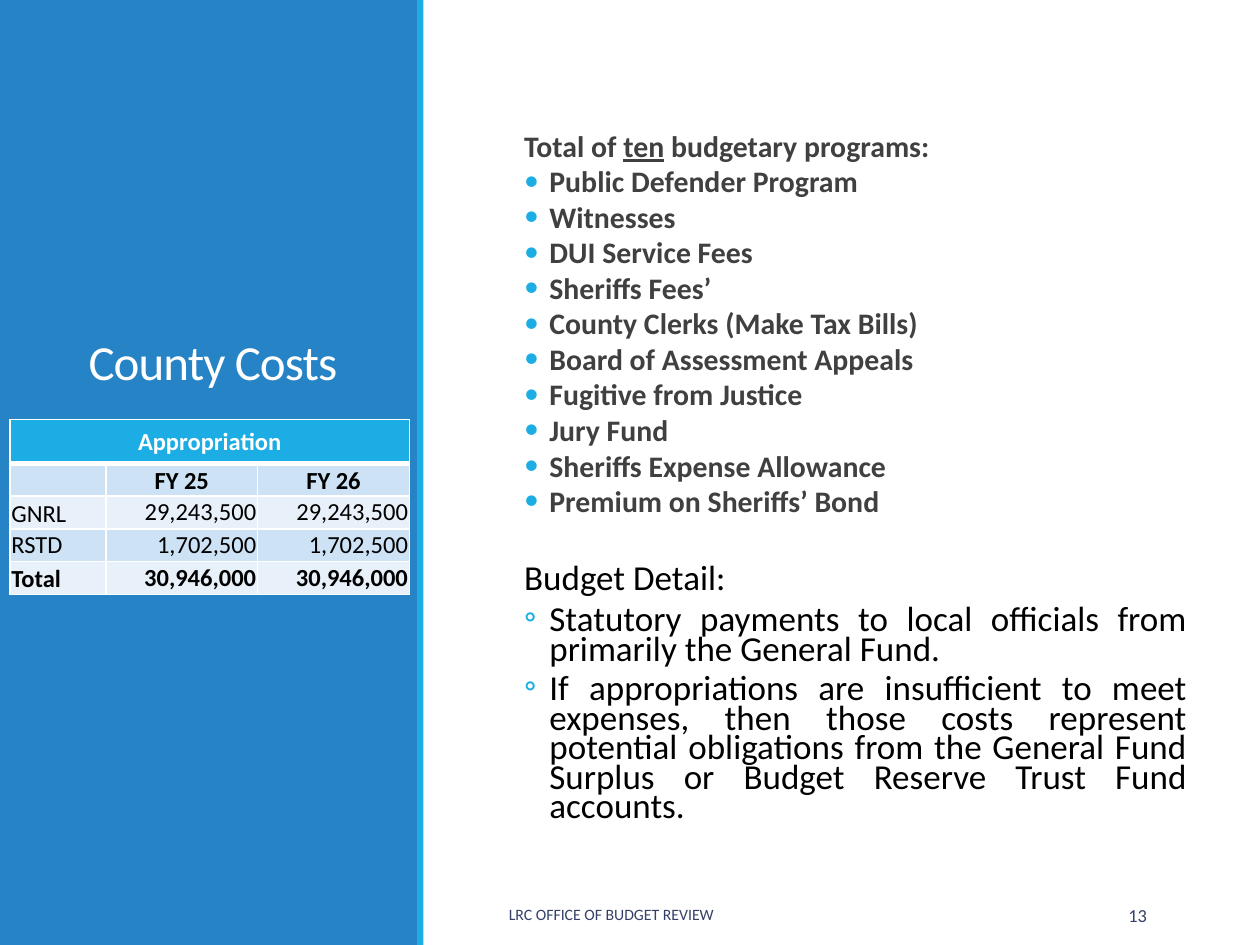
from lxml.etree import SubElement
from pptx import Presentation
from pptx.dml.color import RGBColor
from pptx.enum.shapes import MSO_SHAPE
from pptx.enum.text import MSO_ANCHOR, MSO_AUTO_SIZE, PP_ALIGN
from pptx.oxml import parse_xml
from pptx.oxml.ns import nsdecls, qn
from pptx.util import Inches, Pt

WIDE, HIGH = 10, 7.5
HUES = {"panel": "2683C6", "edge": "1CADE4", "white": "FFFFFF", "black": "000000",
        "grey": "404040", "foot": "344068", "band": "CDE3F5", "pale": "E8F1FA"}
FACE = "Calibri"
ITEMS = ["Public Defender Program", "Witnesses", "DUI Service Fees", "Sheriffs Fees’",
         "County Clerks (Make Tax Bills)", "Board of Assessment Appeals",
         "Fugitive from Justice", "Jury Fund", "Sheriffs Expense Allowance",
         "Premium on Sheriffs’ Bond"]
NOTES = ["Statutory payments to local officials from primarily the General Fund.",
         "If appropriations are insufficient to meet expenses, then those costs represent "
         "potential obligations from the General Fund Surplus or Budget Reserve Trust Fund "
         "accounts."]
ROWS = [["Appropriation", "", ""], ["", "FY 25", "FY 26"],
        ["GNRL", "29,243,500", "29,243,500"], ["RSTD", "1,702,500", "1,702,500"],
        ["Total", "30,946,000", "30,946,000"]]


def tint(name):
    """Return the named colour."""
    return RGBColor.from_string(HUES[name])


def place(shape, box):
    """Move a shape to a box in inches."""
    shape.left, shape.top, shape.width, shape.height = map(Inches, box)


def style(para, size, hue, bold=False):
    """Format every run of a paragraph."""
    for run in para.runs:
        font = run.font
        font.name, font.size, font.bold = FACE, Pt(size), bold
        font.color.rgb = tint(hue)


def add_panel(slide, box):
    """Draw the side panel and its edge behind all else."""
    left, top, width, height = box
    edge = 0.05
    parts = [("panel", left, width - edge), ("edge", left + width - edge, edge)]
    for spot, (hue, start, span) in enumerate(parts):
        shape = slide.shapes.add_shape(
            MSO_SHAPE.RECTANGLE, *map(Inches, (start, top, span, height)))
        shape.shadow.inherit = False
        shape.fill.solid()
        shape.fill.fore_color.rgb = tint(hue)
        shape.line.fill.background()
        slide.shapes.element.insert(2 + spot, shape.element)


def add_title(slide, box):
    """Fill the title placeholder."""
    title = slide.shapes.title
    place(title, box)
    frame = title.text_frame
    frame.text = "County Costs"
    frame.auto_size = MSO_AUTO_SIZE.NONE
    frame.vertical_anchor = MSO_ANCHOR.BOTTOM
    para = frame.paragraphs[0]
    para.alignment, para.line_spacing = PP_ALIGN.CENTER, 0.85
    style(para, 28, "white")
    para.runs[0].font._element.set("spc", "-50")


def add_line(frame, text, size, hue, bold, mark=None, space=0.7, gap=2):
    """Append one body paragraph, with a bullet if a mark is given."""
    para = frame.paragraphs[0]
    if para.runs:
        para = frame.add_paragraph()
    para.text = text
    props = para._p.get_or_add_pPr()
    props.set("marL", str(Inches(0.42 if mark else 0.22)))
    props.set("indent", str(Inches(-0.2 if mark else 0)))
    if mark:
        color = SubElement(props, qn("a:buClr"))
        SubElement(color, qn("a:srgbClr"), val=HUES["edge"])
        SubElement(props, qn("a:buFont"), typeface=FACE)
        SubElement(props, qn("a:buChar"), char=mark)
    else:
        SubElement(props, qn("a:buNone"))
    para.alignment, para.line_spacing = PP_ALIGN.JUSTIFY, space
    para.space_before, para.space_after = Pt(gap), Pt(4)
    style(para, size, hue, bold)
    return para


def add_body(slide, box):
    """Fill the body placeholder with both lists."""
    body = slide.placeholders[1]
    place(body, box)
    frame = body.text_frame
    frame.auto_size, frame.word_wrap = MSO_AUTO_SIZE.NONE, True
    frame.vertical_anchor = MSO_ANCHOR.TOP
    frame.margin_left = frame.margin_right = 0
    frame.margin_top, frame.margin_bottom = Inches(0.44), Inches(0.05)
    head = add_line(frame, "Total of ", 17, "grey", True, gap=0)
    for text in ("ten", " budgetary programs:"):
        head.add_run().text = text
    style(head, 17, "grey", True)
    head.runs[1].font.underline = True
    for item in ITEMS:
        add_line(frame, item, 17, "grey", True, "•")
    add_line(frame, "Budget Detail:", 20, "black", False, space=0.8, gap=22.5)
    for note in NOTES:
        add_line(frame, note, 20, "black", False, "◦")


def add_rule(cell, heavy):
    """Give a cell white borders, thick on the heavy side."""
    props = cell._tc.get_or_add_tcPr()
    for spot, side in enumerate(("lnL", "lnR", "lnT", "lnB")):
        width = Pt(3 if side == heavy else 1)
        props.insert(spot, parse_xml(
            f'<a:{side} {nsdecls("a")} w="{width}"><a:solidFill>'
            f'<a:srgbClr val="{HUES["white"]}"/></a:solidFill></a:{side}>'))


def add_cell(cell, text, row, col):
    """Fill and format one cell by its row and column."""
    cell.fill.solid()
    cell.fill.fore_color.rgb = tint("edge" if row == 0 else "band" if row % 2 else "pale")
    add_rule(cell, {0: "lnB", 1: "lnT"}.get(row))
    cell.margin_left = cell.margin_right = cell.margin_top = Inches(0.01)
    cell.margin_bottom = 0
    low = row == 1 or (col == 0 and row in (2, 4))
    cell.vertical_anchor = (MSO_ANCHOR.MIDDLE if row == 0 else
                            MSO_ANCHOR.BOTTOM if low else MSO_ANCHOR.TOP)
    para = cell.text_frame.paragraphs[0]
    if not text:
        SubElement(para._p, qn("a:endParaRPr"), sz="1400")
        return
    para.text = text
    para.alignment = (PP_ALIGN.CENTER if row < 2 else
                      PP_ALIGN.RIGHT if col else PP_ALIGN.LEFT)
    style(para, 14, "black" if row else "white", row in (0, 1, 4))


def add_costs(slide, box):
    """Build the appropriation table."""
    frame = slide.shapes.add_table(len(ROWS), 3, *map(Inches, box))
    table = frame.table
    for col, share in zip(table.columns, (0.24, 0.38, 0.38)):
        col.width = Inches(box[2] * share)
    for row, share in zip(table.rows, (0.25, *[0.1875] * 4)):
        row.height = Inches(box[3] * share)
    for row, line in enumerate(ROWS):
        for col, text in enumerate(line):
            add_cell(table.cell(row, col), text, row, col)
    table.cell(0, 0).merge(table.cell(0, 2))


def add_foot(slide, box):
    """Set the footer and the page number at the ends of the box."""
    left, top, width, height = box
    parts = [("LRC OFFICE OF BUDGET REVIEW", left, 3.81, 9, PP_ALIGN.LEFT),
             ("13", left + width - 1.08, 1.08, 10.5, PP_ALIGN.RIGHT)]
    for text, start, span, size, align in parts:
        shape = slide.shapes.add_textbox(*map(Inches, (start, top, span, height)))
        frame = shape.text_frame
        frame.word_wrap, frame.vertical_anchor = True, MSO_ANCHOR.MIDDLE
        frame.text = text
        frame.paragraphs[0].alignment = align
        style(frame.paragraphs[0], size, "foot")


def main():
    """Build and save the slide."""
    deck = Presentation()
    deck.slide_width, deck.slide_height = Inches(WIDE), Inches(HIGH)
    slide = deck.slides.add_slide(deck.slide_layouts[1])
    add_panel(slide, (0, 0, 3.36, HIGH))
    add_title(slide, (0.38, 0.65, 2.62, 2.5))
    add_body(slide, (3.94, 0.65, 5.48, 6.12))
    add_costs(slide, (0.08, 3.33, 3.17, 1.39))
    add_foot(slide, (3.94, 7.06, 5.26, 0.4))
    deck.save("out.pptx")


if __name__ == "__main__":
    main()
